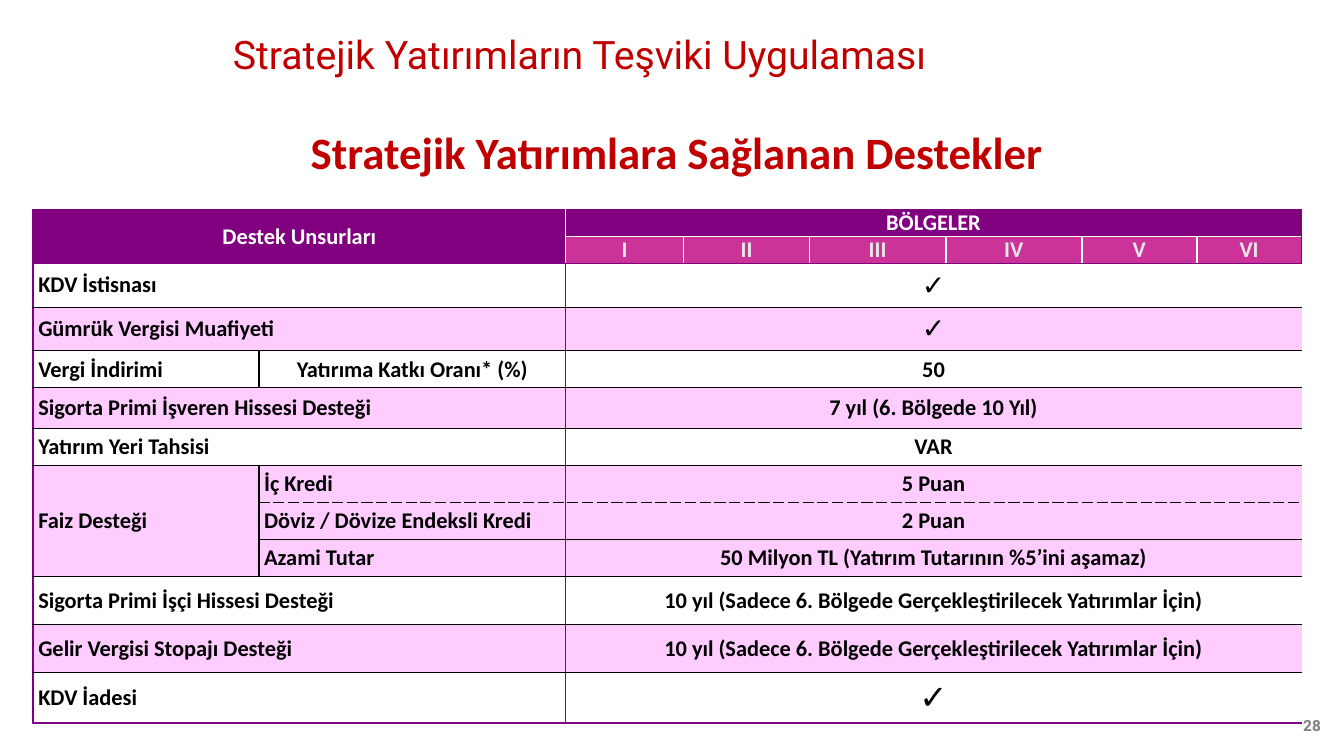
from lxml import etree
from pptx import Presentation
from pptx.dml.color import RGBColor
from pptx.enum import shapes, text
from pptx.oxml import ns
from pptx.util import Inches, Pt

RED = RGBColor(0xC0, 0x00, 0x00)
PURPLE = RGBColor(0x80, 0x00, 0x80)
PINK = RGBColor(0xCC, 0x33, 0x99)
PALE = RGBColor(0xFF, 0xCC, 0xFF)
LIGHT = RGBColor(0xE7, 0xE6, 0xE6)
GRAY = RGBColor(0x7F, 0x7F, 0x7F)
BLACK = RGBColor(0, 0, 0)
WHITE = RGBColor(0xFF, 0xFF, 0xFF)

# Each pen is colour, width in points, dash
FRAME = (PURPLE, 1.5, "solid")
GAP = (WHITE, 1.5, "solid")
THIN = (BLACK, 1, "solid")
DASH = (BLACK, 1, "dash")

LEFT, MID = text.PP_ALIGN.LEFT, text.PP_ALIGN.CENTER
PLAIN = "{2D5ABB26-0587-4C30-8999-92F81FD0307C}"

COLS = [2.24, 3.04, 1.17, 1.25, 1.35, 1.35, 1.14, 1.04]
ROWS = [0.32, 0.26, 0.26, 0.43, 0.43, 0.36, 0.4] + [0.36] * 4 + [0.48, 0.48, 0.49]
HEAD = 3  # first body row
SHADED = {4, 6, 8, 9, 10, 12}
LIMIT = "10 yıl (Sadece 6. Bölgede Gerçekleştirilecek Yatırımlar İçin)"
LABELS = {
    3: "KDV İstisnası",
    4: "Gümrük Vergisi Muafiyeti",
    6: "Sigorta Primi İşveren Hissesi Desteği",
    7: "Yatırım Yeri Tahsisi",
    11: "Sigorta Primi İşçi Hissesi Desteği",
    12: "Gelir Vergisi Stopajı Desteği",
    13: "KDV İadesi",
}
VALUES = ["✓", "✓", "50", "7 yıl (6. Bölgede 10 Yıl)", "VAR", "5 Puan", "2 Puan",
          "50 Milyon TL (Yatırım Tutarının %5’ini aşamaz)", LIMIT, LIMIT, "✓"]
LOANS = ["İç Kredi", "Döviz / Dövize Endeksli Kredi", "Azami Tutar"]


def upright(x, row):
    """Pen for the vertical grid line x beside a row."""
    if row == 0:
        return None
    if x in (0, len(COLS)):
        return FRAME
    if row < HEAD:
        return GAP
    return THIN if x == 1 else FRAME


def level(y):
    """Pen for the horizontal grid line y."""
    if y in (1, HEAD, len(ROWS)):
        return FRAME
    return {0: None, 2: GAP, 9: DASH}.get(y, THIN)


class Page:
    def __init__(self, deck):
        self.slide = deck.slides.add_slide(deck.slide_layouts[5])
        self.grid = None

    def style(self, para, size, color, face="Calibri", bold=True, align=LEFT):
        para.alignment = align
        font = para.font
        font.name, font.size, font.bold = face, Pt(size), bold
        font.color.rgb = color

    def title(self, words, *box):
        shape = self.slide.shapes.title
        shape.left, shape.top, shape.width, shape.height = map(Inches, box)
        frame = shape.text_frame
        frame.text = words
        frame.auto_size = text.MSO_AUTO_SIZE.NONE
        frame.vertical_anchor = text.MSO_ANCHOR.MIDDLE
        para = frame.paragraphs[0]
        para.line_spacing = 0.9
        self.style(para, 28, RED, "Roboto", False)

    def banner(self, words, *box):
        shape = self.slide.shapes.add_shape(
            shapes.MSO_SHAPE.ROUNDED_RECTANGLE, *map(Inches, box))
        shape.shadow.inherit = False
        shape.fill.background()
        shape.line.fill.background()
        frame = shape.text_frame
        frame.text = words
        self.style(frame.paragraphs[0], 32, RED, align=MID)

    def number(self, words, *box):
        frame = self.slide.shapes.add_textbox(*map(Inches, box)).text_frame
        frame.word_wrap = True
        frame.vertical_anchor = text.MSO_ANCHOR.MIDDLE
        frame.text = words
        self.style(frame.paragraphs[0], 11, GRAY, "Roboto", align=text.PP_ALIGN.RIGHT)

    def table(self, left, top):
        self.grid = self.slide.shapes.add_table(
            len(ROWS), len(COLS), Inches(left), Inches(top),
            Inches(sum(COLS)), Inches(sum(ROWS))).table
        self.grid.first_row = self.grid.horz_banding = False
        self.grid._tbl.tblPr.find(ns.qn("a:tableStyleId")).text = PLAIN
        for col, width in zip(self.grid.columns, COLS):
            col.width = Inches(width)
        for row, height in zip(self.grid.rows, ROWS):
            row.height = Inches(height)

    def edge(self, cell, side, pen):
        props = cell._tc.get_or_add_tcPr()
        line = etree.SubElement(props, ns.qn("a:ln" + side))
        if pen is None:
            etree.SubElement(line, ns.qn("a:noFill"))
            return
        color, width, dash = pen
        line.set("w", str(Pt(width)))
        fill = etree.SubElement(line, ns.qn("a:solidFill"))
        etree.SubElement(fill, ns.qn("a:srgbClr")).set("val", str(color))
        etree.SubElement(line, ns.qn("a:prstDash")).set("val", dash)

    def cell(self, row, col, words, high=1, wide=1, fill=None,
             color=BLACK, align=MID, size=16, face="Calibri"):
        """Fill one cell, merged over high rows and wide columns."""
        end, last = row + high, col + wide
        for y in range(row, end):
            for x in range(col, last):
                part = self.grid.cell(y, x)
                self.edge(part, "L", upright(x, y) if x == col else None)
                self.edge(part, "R", upright(x + 1, y) if x + 1 == last else None)
                self.edge(part, "T", level(y) if y == row else None)
                self.edge(part, "B", level(y + 1) if y + 1 == end else None)
                if fill is None:
                    part.fill.background()
                else:
                    part.fill.solid()
                    part.fill.fore_color.rgb = fill
        cell = self.grid.cell(row, col)
        if high * wide > 1:
            cell.merge(self.grid.cell(end - 1, last - 1))
        cell.margin_left = cell.margin_right = Inches(0.05)
        cell.margin_top = cell.margin_bottom = Inches(0.05 if row >= HEAD else 0)
        cell.vertical_anchor = text.MSO_ANCHOR.MIDDLE
        cell.text = words
        self.style(cell.text_frame.paragraphs[0], size, color, face, align=align)

    def body(self, row, col, words, **kind):
        self.cell(row, col, words, fill=PALE if row in SHADED else None, **kind)


def main():
    deck = Presentation()
    deck.slide_width, deck.slide_height = Inches(13.33), Inches(7.5)
    page = Page(deck)
    page.number("28", 12.77, 7.07, 0.43, 0.25)
    page.title("Stratejik Yatırımların Teşviki Uygulaması", 2.21, 0.16, 10.99, 0.8)

    page.table(0.33, 1.76)
    page.cell(0, 0, "", wide=8)
    page.cell(1, 0, "Destek Unsurları", high=2, wide=2, fill=PURPLE, color=WHITE)
    page.cell(1, 2, "BÖLGELER", wide=6, fill=PURPLE, color=WHITE)
    for col, zone in enumerate(["I", "II", "III", "IV", "V", "VI"], 2):
        page.cell(2, col, zone, fill=PINK, color=LIGHT)

    for row, label in LABELS.items():
        page.body(row, 0, label, wide=2, align=LEFT)
    page.body(5, 0, "Vergi İndirimi", align=LEFT)
    page.body(5, 1, "Yatırıma Katkı Oranı* (%)")
    page.body(8, 0, "Faiz Desteği", high=3, align=LEFT)
    for row, loan in enumerate(LOANS, 8):
        page.body(row, 1, loan, align=LEFT)
    for row, value in enumerate(VALUES, HEAD):
        mark = {}
        if value == "✓":
            mark = {"face": "Arial", "size": 24 if row == 13 else 20}
        page.body(row, 2, value, wide=6, **mark)

    page.banner("Stratejik Yatırımlara Sağlanan Destekler", 1.91, 1.17, 9.61, 0.67)
    deck.save("out.pptx")


if __name__ == "__main__":
    main()
